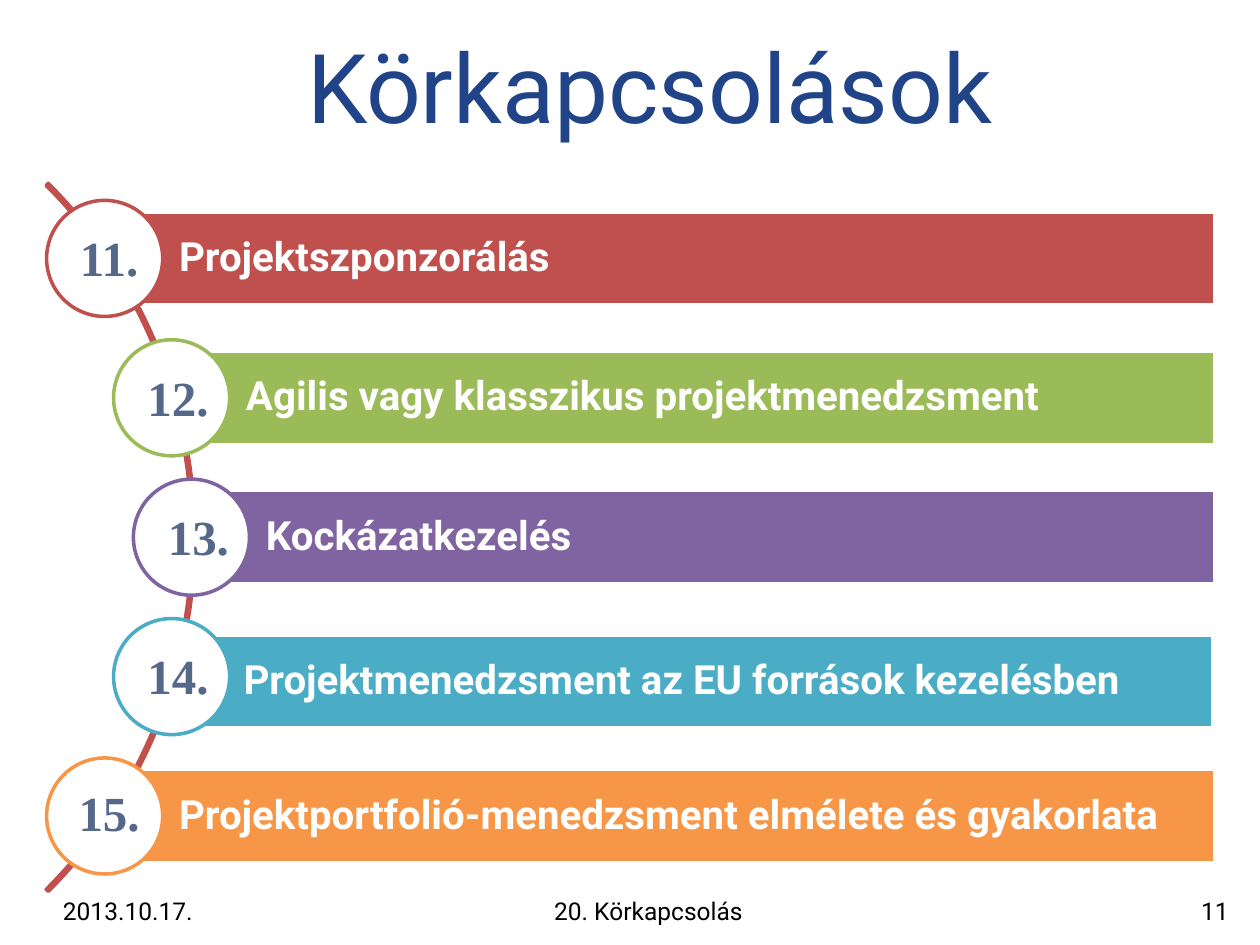
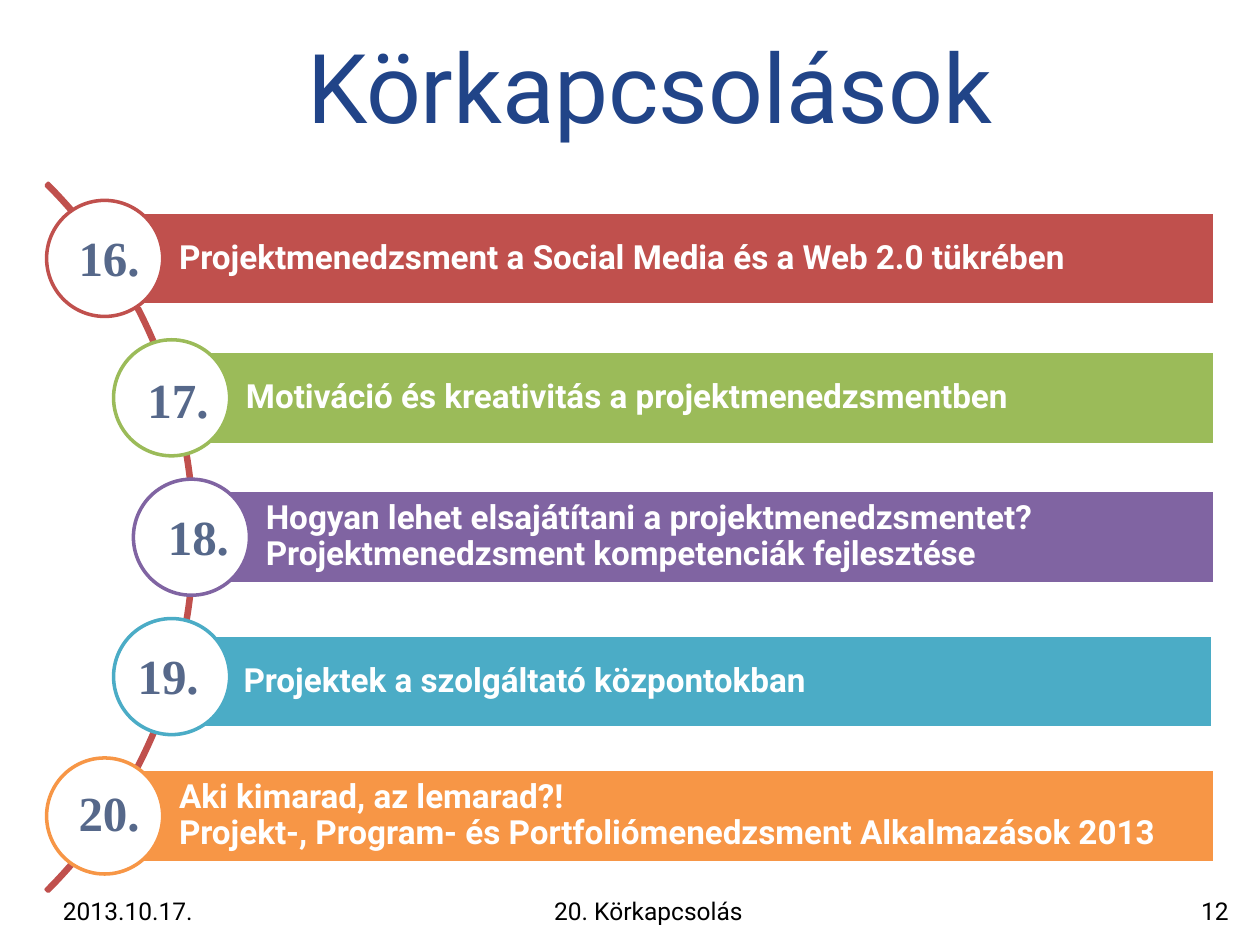
from dataclasses import dataclass

from pptx import Presentation
from pptx.dml.color import RGBColor
from pptx.enum.shapes import MSO_SHAPE
from pptx.enum.text import MSO_ANCHOR, PP_ALIGN
from pptx.util import Cm, Pt

ARC, RECT, OVAL = MSO_SHAPE.BLOCK_ARC, MSO_SHAPE.RECTANGLE, MSO_SHAPE.OVAL
LEFT, MID, RIGHT = PP_ALIGN.LEFT, PP_ALIGN.CENTER, PP_ALIGN.RIGHT
TOP, CENTER = MSO_ANCHOR.TOP, MSO_ANCHOR.MIDDLE

TITLE = "Körkapcsolások"
DATE = "2013.10.17."
FOOT = "20. Körkapcsolás"

# One dict per slide; nudge moves the number of a row by (x, y) cm
PAGES = [
    {"page": 11, "first": 11, "size": 23, "pad": 0.15, "nudge": {}, "topics": [
        "Projektszponzorálás",
        "Agilis vagy klasszikus projektmenedzsment",
        "Kockázatkezelés",
        "Projektmenedzsment az EU források kezelésben",
        "Projektportfolió-menedzsment elmélete és gyakorlata",
    ]},
    {"page": 12, "first": 16, "size": 19, "pad": 0.13,
     "nudge": {1: (0, 0.05), 3: (-0.2, 0)}, "topics": [
         "Projektmenedzsment a Social Media és a Web 2.0 tükrében",
         "Motiváció és kreativitás a projektmenedzsmentben",
         "Hogyan lehet elsajátítani a projektmenedzsmentet? "
         "Projektmenedzsment kompetenciák fejlesztése",
         "Projektek a szolgáltató központokban",
         "Aki kimarad, az lemarad?!\v"
         "Projekt-, Program- és Portfoliómenedzsment Alkalmazások 2013",
     ]},
]


@dataclass(frozen=True)
class Theme:
    sans: str = "Roboto"
    serif: str = "Times New Roman"
    title: str = "214488"
    digit: str = "56688A"
    ink: str = "000000"
    white: str = "FFFFFF"
    arc: str = "C0504D"
    rows: tuple = ("C0504D", "9BBB59", "8064A2", "4BACC6", "F79646")
    head_pt: int = 55
    digit_pt: int = 28
    foot_pt: int = 14
    line_pt: int = 2


THEME = Theme()

# Lengths in cm. Each row: circle left, then number offset from the circle
ROWS = [(0.94, 0.36, 0.43), (2.29, 0.4, 0.43), (2.69, 0.41, 0.43),
        (2.29, 0.4, 0.41), (0.94, 0.36, 0.38)]
ROW_TOP, PITCH, DISC = 4.04, 2.81, 2.34
BAR_H, BAR_IN, BAR_END = 1.88, 1.17, 24.49
BAR_MOVE = {3: (-0.05, 0.1)}
FOOT_TOP, FOOT_H = 17.93, 0.74


def write(shape, text, font, align=LEFT, anchor=TOP, **frame):
    box = shape.text_frame
    for key, val in {"word_wrap": True, "vertical_anchor": anchor, **frame}.items():
        setattr(box, key, val)
    para = box.paragraphs[0]
    para.text = text
    para.alignment = align
    name, size, color, bold = font
    for key, val in {"name": name, "size": Pt(size), "bold": bold}.items():
        setattr(para.font, key, val)
    para.font.color.rgb = RGBColor.from_string(color)
    return para


def label(slide, area, text, font, **style):
    write(slide.shapes.add_textbox(*map(Cm, area)), text, font, **style)


def draw(slide, kind, area, line, fill=None):
    shape = slide.shapes.add_shape(kind, *map(Cm, area))
    shape.shadow.inherit = False
    shape.line.color.rgb = RGBColor.from_string(line)
    shape.line.width = Pt(THEME.line_pt)
    if fill:
        shape.fill.solid()
        shape.fill.fore_color.rgb = RGBColor.from_string(fill)
    else:
        shape.fill.background()
    return shape


def frame(slide, page):
    """Add the title and the footer that the slides share."""
    label(slide, (5.94, 0.41, 19.05, 2.59), TITLE,
          (THEME.sans, THEME.head_pt, THEME.title, False), anchor=CENTER)
    font = (THEME.sans, THEME.foot_pt, THEME.ink, False)
    for left, width, text, align in [(1.02, 4.72, DATE, LEFT),
                                     (5.94, 14.27, FOOT, MID),
                                     (20.45, 4.57, str(page), RIGHT)]:
        label(slide, (left, FOOT_TOP, width, FOOT_H), text, font, align=align)


def topics(slide, data):
    """Add the arc, and a bar, a circle and a number for each topic."""
    arc = draw(slide, ARC, (-16.26, 0.74, 20.19, 20.19), THEME.arc)
    for i, val in enumerate((189, 27, 0.003)):
        arc.adjustments[i] = val

    pad = Cm(data["pad"])
    inset = {"margin_left": Cm(1.5), "margin_top": pad,
             "margin_right": pad, "margin_bottom": pad}
    font = (THEME.sans, data["size"], THEME.white, True)
    digit = (THEME.serif, THEME.digit_pt, THEME.digit, True)
    for i, (text, color, row) in enumerate(zip(data["topics"], THEME.rows, ROWS)):
        left, num_x, num_y = row
        top = ROW_TOP + i * PITCH
        dx, dy = BAR_MOVE.get(i, (0, 0))
        area = (left + BAR_IN + dx, top + (DISC - BAR_H) / 2 + dy,
                BAR_END - left - BAR_IN, BAR_H)
        bar = draw(slide, RECT, area, THEME.white, color)
        write(bar, text, font, anchor=CENTER, **inset).line_spacing = 0.9
        draw(slide, OVAL, (left, top, DISC, DISC), color, THEME.white)
        dx, dy = data["nudge"].get(i, (0, 0))
        label(slide, (left + num_x + dx, top + num_y + dy, 1.8, 1.45),
              f"{data['first'] + i}.", digit, align=MID)


def main():
    deck = Presentation()
    deck.slide_width, deck.slide_height = Cm(25.4), Cm(19.05)
    for data in PAGES:
        slide = deck.slides.add_slide(deck.slide_layouts[6])
        frame(slide, data["page"])
        topics(slide, data)
    deck.save("out.pptx")


if __name__ == "__main__":
    main()
